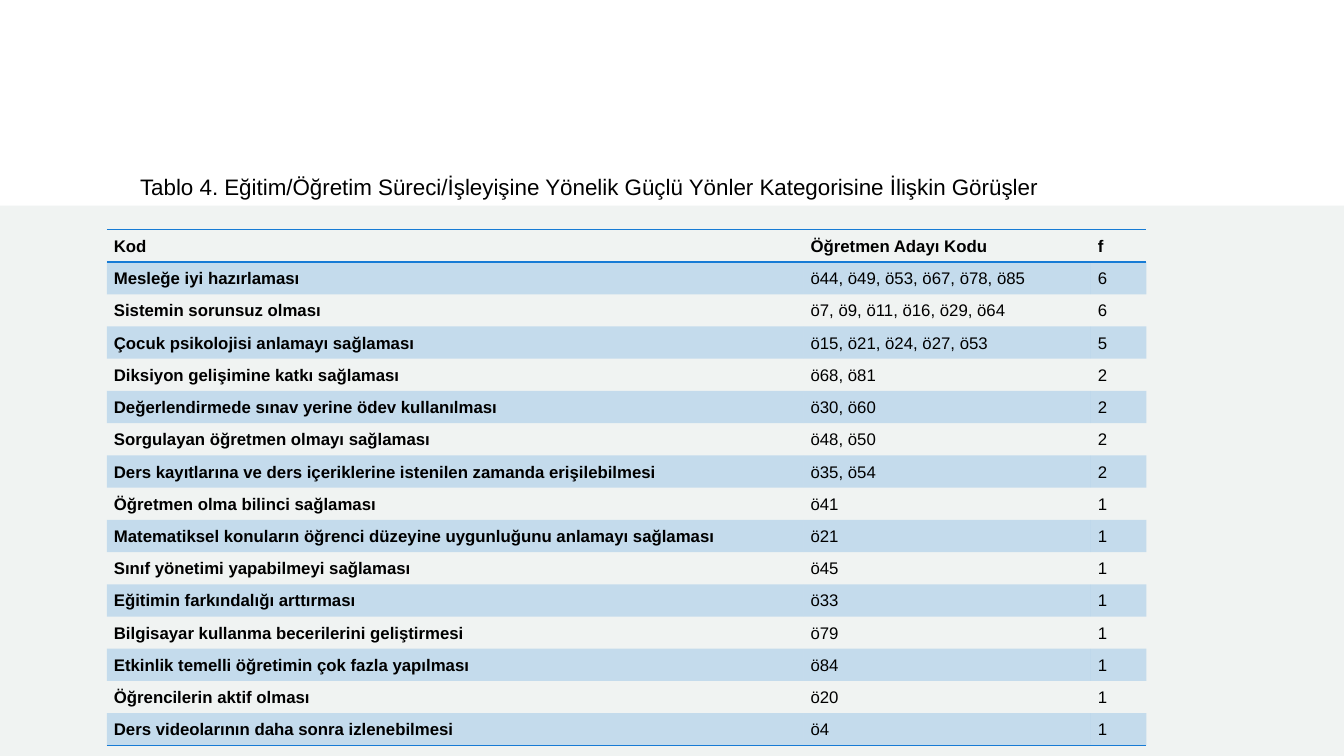
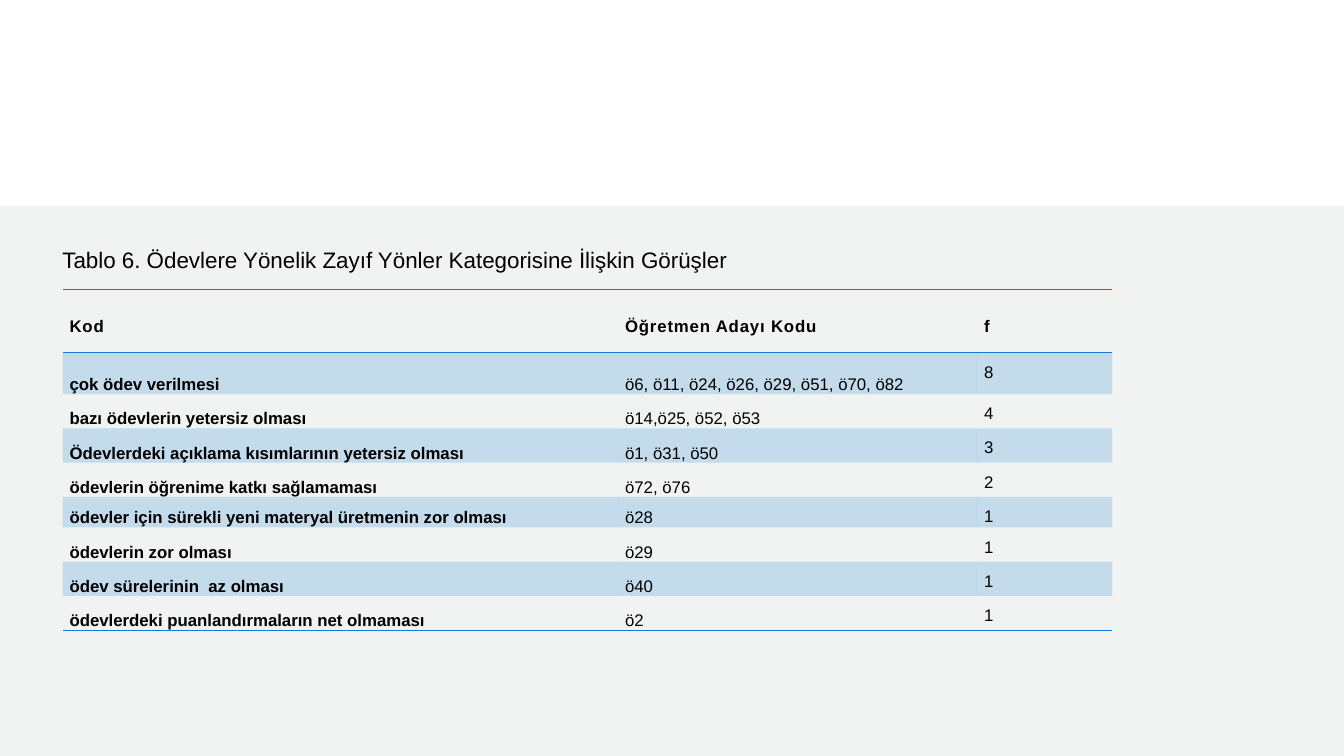
from dataclasses import dataclass

from lxml.etree import SubElement
from pptx import Presentation
from pptx.dml.color import RGBColor
from pptx.enum.shapes import MSO_SHAPE
from pptx.enum.text import MSO_ANCHOR, MSO_AUTO_SIZE, PP_ALIGN
from pptx.oxml.ns import qn
from pptx.slide import Slide
from pptx.table import _Cell
from pptx.util import Inches, Pt

FONT = "Arial"
BLACK = RGBColor(0x00, 0x00, 0x00)
WHITE = RGBColor(0xFF, 0xFF, 0xFF)
PALE_GREY = RGBColor(0xF0, 0xF3, 0xF2)
BLUE = RGBColor(0x17, 0x7B, 0xD5)

SLIDE_WIDTH, SLIDE_HEIGHT = 13.33, 7.5
BAND_TOP = 2.04
STRIPE_OPACITY = 20  # percent
RULE_WIDTH = Pt(1)
NO_STYLE_ID = "{2D5ABB26-0587-4C30-8999-92F81FD0307C}"
HEADINGS = ("Kod", "Öğretmen Adayı Kodu", "f")


@dataclass(frozen=True)
class Opinion:
    code: str
    candidates: str
    frequency: int


@dataclass(frozen=True)
class OpinionSlide:
    caption: str
    caption_box: tuple[float, float, float, float]
    table_left: float
    table_top: float
    column_widths: tuple[float, ...]
    row_heights: tuple[float, ...]
    margins: tuple[float, float, float, float]  # left, top, right, bottom
    heading_spacing: int  # hundredths of a point
    opinions: tuple[Opinion, ...]


STRENGTHS = (
    Opinion("Mesleğe iyi hazırlaması", "ö44, ö49, ö53, ö67, ö78, ö85", 6),
    Opinion("Sistemin sorunsuz olması", "ö7, ö9, ö11, ö16, ö29, ö64", 6),
    Opinion("Çocuk psikolojisi anlamayı sağlaması", "ö15, ö21, ö24, ö27, ö53", 5),
    Opinion("Diksiyon gelişimine katkı sağlaması", "ö68, ö81", 2),
    Opinion("Değerlendirmede sınav yerine ödev kullanılması", "ö30, ö60", 2),
    Opinion("Sorgulayan öğretmen olmayı sağlaması", "ö48, ö50", 2),
    Opinion("Ders kayıtlarına ve ders içeriklerine istenilen zamanda erişilebilmesi",
            "ö35, ö54", 2),
    Opinion("Öğretmen olma bilinci sağlaması", "ö41", 1),
    Opinion("Matematiksel konuların öğrenci düzeyine uygunluğunu anlamayı sağlaması",
            "ö21", 1),
    Opinion("Sınıf yönetimi yapabilmeyi sağlaması", "ö45", 1),
    Opinion("Eğitimin farkındalığı arttırması", "ö33", 1),
    Opinion("Bilgisayar kullanma becerilerini geliştirmesi", "ö79", 1),
    Opinion("Etkinlik temelli öğretimin çok fazla yapılması", "ö84", 1),
    Opinion("Öğrencilerin aktif olması", "ö20", 1),
    Opinion("Ders videolarının daha sonra izlenebilmesi", "ö4", 1),
)

HOMEWORK_WEAKNESSES = (
    Opinion("çok ödev verilmesi", "ö6, ö11, ö24, ö26, ö29, ö51, ö70, ö82", 8),
    Opinion("bazı ödevlerin yetersiz olması", "ö14,ö25, ö52, ö53", 4),
    Opinion("Ödevlerdeki açıklama kısımlarının yetersiz olması", "ö1, ö31, ö50", 3),
    Opinion("ödevlerin öğrenime katkı sağlamaması", "ö72, ö76", 2),
    Opinion("ödevler için sürekli yeni materyal üretmenin zor olması", "ö28", 1),
    Opinion("ödevlerin zor olması", "ö29", 1),
    Opinion("ödev sürelerinin  az olması", "ö40", 1),
    Opinion("ödevlerdeki puanlandırmaların net olmaması", "ö2", 1),
)

OPINION_SLIDES = (
    OpinionSlide(
        caption="Tablo 4. Eğitim/Öğretim Süreci/İşleyişine Yönelik Güçlü Yönler "
                "Kategorisine İlişkin Görüşler",
        caption_box=(1.29, 1.67, 10.31, 0.37),
        table_left=1.06, table_top=2.28,
        column_widths=(6.91, 2.85, 0.55),
        row_heights=(0.31,) * (len(STRENGTHS) + 1),
        margins=(0.07, 0.06, 0.01, 0.06),
        heading_spacing=0,
        opinions=STRENGTHS,
    ),
    OpinionSlide(
        caption="Tablo 6. Ödevlere Yönelik Zayıf Yönler Kategorisine İlişkin Görüşler",
        caption_box=(0.52, 2.39, 8.92, 0.37),
        table_left=0.62, table_top=2.87,
        column_widths=(5.51, 3.56, 1.34),
        row_heights=(0.63, 0.41, 0.34, 0.34, 0.34, 0.29, 0.34, 0.34, 0.34),
        margins=(0.07, 0.09, 0.07, 0),
        heading_spacing=60,
        opinions=HOMEWORK_WEAKNESSES,
    ),
)


def add_band(slide: Slide, top: float, color: RGBColor) -> None:
    """Fill the slide with a colour from the given height down."""
    band = slide.shapes.add_shape(
        MSO_SHAPE.RECTANGLE, 0, Inches(top),
        Inches(SLIDE_WIDTH), Inches(SLIDE_HEIGHT - top))
    band.shadow.inherit = False
    band.fill.solid()
    band.fill.fore_color.rgb = color
    band.line.fill.background()


def add_caption(slide: Slide, text: str, box: tuple[float, float, float, float]) -> None:
    frame = slide.shapes.add_textbox(*map(Inches, box)).text_frame
    frame.word_wrap = True
    frame.auto_size = MSO_AUTO_SIZE.SHAPE_TO_FIT_TEXT
    paragraph = frame.paragraphs[0]
    paragraph.text = text
    paragraph.font.name = FONT
    paragraph.font.size = Pt(16)
    paragraph.font.color.rgb = BLACK


def fill_cell(cell: _Cell, striped: bool) -> None:
    if not striped:
        cell.fill.background()
        return
    cell.fill.solid()
    cell.fill.fore_color.rgb = BLUE
    color = cell._tc.tcPr.find(f".//{qn('a:srgbClr')}")
    SubElement(color, qn("a:alpha"), val=str(STRIPE_OPACITY * 1000))


def rule_cell(cell: _Cell, edges: tuple[str, ...]) -> None:
    """Draw blue rules on the named edges; borders precede the fill in the XML."""
    properties = cell._tc.get_or_add_tcPr()
    for position, edge in enumerate(edges):
        line = SubElement(properties, qn(f"a:{edge}"), w=str(RULE_WIDTH))
        SubElement(SubElement(line, qn("a:solidFill")), qn("a:srgbClr"), val=str(BLUE))
        properties.insert(position, line)


def write_cell(cell: _Cell, text: str, bold: bool, anchor: MSO_ANCHOR,
               margins: tuple[float, float, float, float], spacing: int) -> None:
    (cell.margin_left, cell.margin_top,
     cell.margin_right, cell.margin_bottom) = map(Inches, margins)
    cell.vertical_anchor = anchor
    paragraph = cell.text_frame.paragraphs[0]
    paragraph.text = text
    paragraph.alignment = PP_ALIGN.JUSTIFY
    paragraph.line_spacing = 1.07
    paragraph.space_after = Pt(8)
    paragraph.font.name = FONT
    paragraph.font.size = Pt(12)
    paragraph.font.bold = bold
    paragraph.font.color.rgb = BLACK
    if spacing:
        paragraph.runs[0].font._element.set("spc", str(spacing))


def add_opinion_table(slide: Slide, content: OpinionSlide) -> None:
    rows = [HEADINGS] + [(o.code, o.candidates, str(o.frequency)) for o in content.opinions]
    table = slide.shapes.add_table(
        len(rows), len(HEADINGS),
        Inches(content.table_left), Inches(content.table_top),
        Inches(sum(content.column_widths)), Inches(sum(content.row_heights))).table
    table._tbl.tblPr.find(qn("a:tableStyleId")).text = NO_STYLE_ID
    table.horz_banding = False
    for column, width in zip(table.columns, content.column_widths):
        column.width = Inches(width)
    for row, height in zip(table.rows, content.row_heights):
        row.height = Inches(height)

    body_anchors = (MSO_ANCHOR.BOTTOM, MSO_ANCHOR.BOTTOM, MSO_ANCHOR.TOP)
    for row_index, texts in enumerate(rows):
        heading = row_index == 0
        if heading:
            edges = ("lnT", "lnB")
        else:
            edges = ("lnB",) if row_index == len(rows) - 1 else ()
        for column_index, text in enumerate(texts):
            cell = table.cell(row_index, column_index)
            write_cell(
                cell, text,
                bold=heading or column_index == 0,
                anchor=MSO_ANCHOR.MIDDLE if heading else body_anchors[column_index],
                margins=content.margins,
                spacing=content.heading_spacing if heading else 0)
            fill_cell(cell, striped=row_index % 2 == 1)
            rule_cell(cell, edges)


def main() -> None:
    presentation = Presentation()
    presentation.slide_width = Inches(SLIDE_WIDTH)
    presentation.slide_height = Inches(SLIDE_HEIGHT)
    blank_layout = presentation.slide_layouts[6]

    for content in OPINION_SLIDES:
        slide = presentation.slides.add_slide(blank_layout)
        # Shared backdrop
        add_band(slide, 0, WHITE)
        add_band(slide, BAND_TOP, PALE_GREY)
        # Table and its caption
        add_opinion_table(slide, content)
        add_caption(slide, content.caption, content.caption_box)

    presentation.save("out.pptx")


if __name__ == "__main__":
    main()
